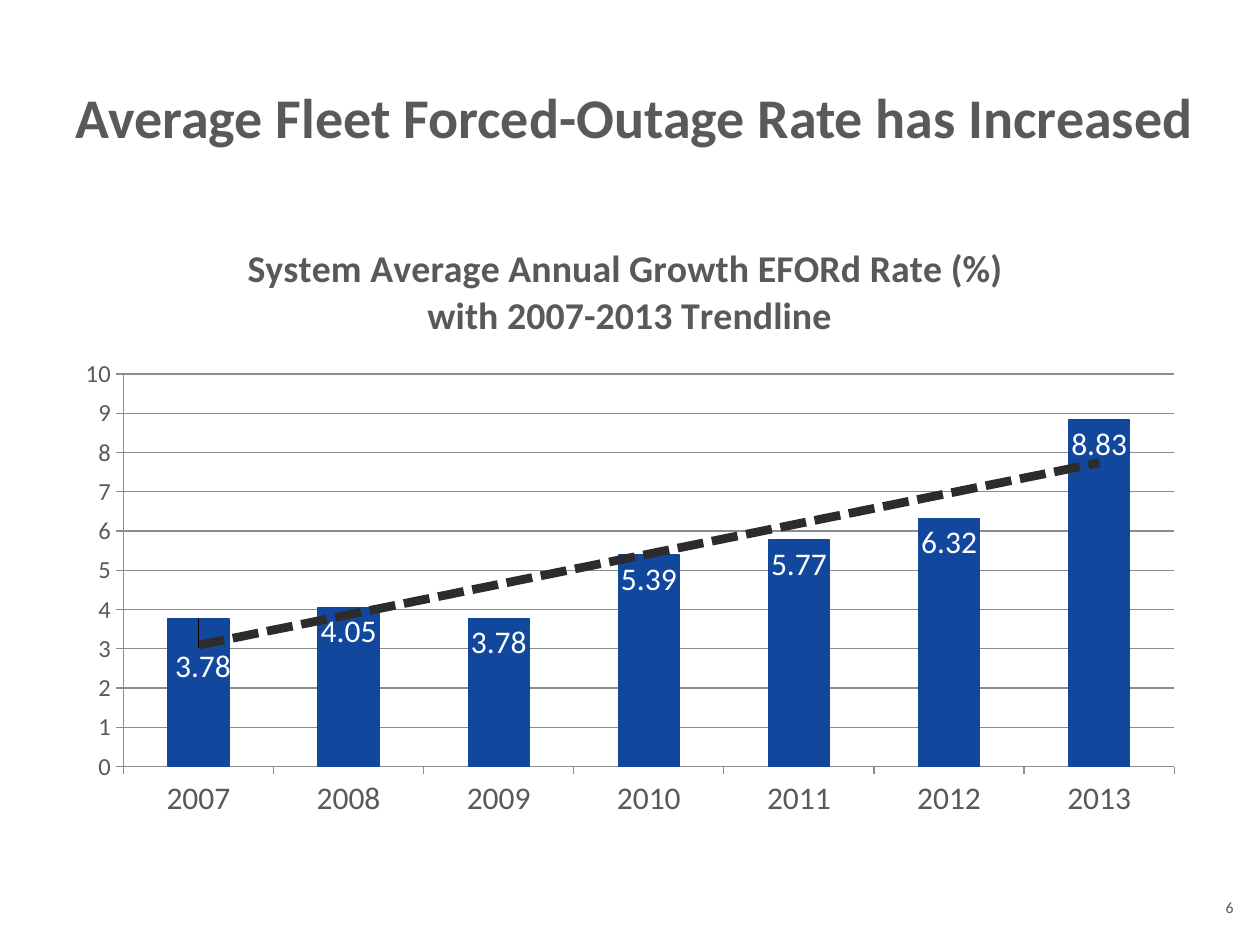
"""Build the slide on the fleet's average forced-outage rate."""
from typing import Any, NamedTuple

from lxml import etree
from pptx import Presentation
from pptx.chart.data import CategoryChartData
from pptx.dml.color import RGBColor
from pptx.enum.chart import XL_CHART_TYPE, XL_LABEL_POSITION, XL_TICK_MARK
from pptx.enum.text import MSO_ANCHOR, PP_ALIGN
from pptx.oxml import parse_xml
from pptx.oxml.ns import nsdecls
from pptx.util import Cm, Pt

COLUMN = XL_CHART_TYPE.COLUMN_CLUSTERED
TOP = XL_LABEL_POSITION.INSIDE_END
OUT = XL_TICK_MARK.OUTSIDE
MIDDLE = MSO_ANCHOR.MIDDLE
CENTER = PP_ALIGN.CENTER

GRAY = RGBColor(0x59, 0x59, 0x59)
BLUE = RGBColor(0x11, 0x47, 0x9D)
WHITE = RGBColor(0xFF, 0xFF, 0xFF)
RULE = RGBColor(0x8C, 0x8C, 0x8C)
DARK = RGBColor(0x2C, 0x2C, 0x2C)

RATES = {"2007": 3.78, "2008": 4.05, "2009": 3.78, "2010": 5.39,
         "2011": 5.77, "2012": 6.32, "2013": 8.83}
TITLE = "Average Fleet Forced-Outage Rate has Increased"
HEADING = ["System Average Annual Growth EFORd Rate (%) ",
           "with 2007-2013 Trendline"]
FRAME = {"word_wrap": True, "vertical_anchor": MIDDLE, "margin_left": 0,
         "margin_right": 0, "margin_top": 0, "margin_bottom": 0}
SCALE = {"minimum_scale": 0, "maximum_scale": 10, "major_unit": 1,
         "has_major_gridlines": True}
LABELS = {"show_value": True, "position": TOP, "number_format": "0.00",
          "number_format_is_linked": False}


class Look(NamedTuple):
    """Hold the size, colour and weight of a text."""
    size: float
    color: RGBColor = GRAY
    bold: bool = False


class Box(NamedTuple):
    """Hold a place in centimetres."""
    left: float
    top: float
    width: float
    height: float

    def sides(self) -> list[Cm]:
        """Return the four lengths."""
        return [Cm(side) for side in self]


def assign(item: Any, values: dict[str, Any]) -> None:
    """Set each named attribute."""
    for name, value in values.items():
        setattr(item, name, value)


def style(font: Any, look: Look) -> None:
    """Apply a look to a font."""
    assign(font, {"name": "Calibri", "size": Pt(look.size), "bold": look.bold})
    font.color.rgb = look.color


def write(frame: Any, lines: list[str], look: Look) -> None:
    """Write centred lines into a text frame."""
    for i, line in enumerate(lines):
        para = frame.add_paragraph() if i else frame.paragraphs[0]
        para.alignment = CENTER
        run = para.add_run()
        run.text = line
        style(run.font, look)


def stroke(line: Any, color: RGBColor) -> None:
    """Draw a thin line in one colour."""
    line.color.rgb = color
    line.width = Pt(0.75)


def trend(series: Any) -> None:
    """Add a dashed linear trend line."""
    node = parse_xml(
        f'<c:trendline {nsdecls("c", "a")}><c:spPr><a:ln w="{Pt(5)}">'
        f'<a:solidFill><a:srgbClr val="{DARK}"/></a:solidFill>'
        '<a:prstDash val="sysDash"/></a:ln></c:spPr>'
        '<c:trendlineType val="linear"/><c:dispRSqr val="0"/>'
        '<c:dispEq val="0"/></c:trendline>')
    series._element.xpath("c:cat")[0].addprevious(node)


def shift(series: Any, across: float, down: float) -> None:
    """Move the first value label off the trend line."""
    label = series.points[0].data_label
    label.position = TOP
    style(label.font, Look(18, WHITE))
    spot = series._element.xpath("c:dLbls/c:dLbl/c:idx")[0]
    layout = parse_xml(f'<c:layout {nsdecls("c")}/>')
    place = etree.SubElement(layout, layout.tag.replace("layout", "manualLayout"))
    for name, value in {"x": across, "y": down}.items():
        etree.SubElement(place, layout.tag.replace("layout", name), val=str(value))
    spot.addnext(layout)


def draw_chart(slide: Any, box: Box) -> None:
    """Draw the yearly rates as columns."""
    data = CategoryChartData()
    data.categories = list(RATES)
    data.add_series("Series 1", list(RATES.values()))
    chart = slide.shapes.add_chart(COLUMN, *box.sides(), data).chart
    chart.has_legend = False
    style(chart.font, Look(18))
    write(chart.chart_title.text_frame, HEADING, Look(21.6, bold=True))
    chart.chart_title.include_in_layout = False
    assign(chart.value_axis, SCALE)
    for axis, size in ((chart.category_axis, 18), (chart.value_axis, 14)):
        axis.major_tick_mark = OUT
        style(axis.tick_labels.font, Look(size))
        stroke(axis.format.line, RULE)
    stroke(chart.value_axis.major_gridlines.format.line, RULE)
    plot = chart.plots[0]
    assign(plot, {"gap_width": 146, "vary_by_categories": False})
    series = plot.series[0]
    series.format.fill.solid()
    series.format.fill.fore_color.rgb = BLUE
    stroke(series.format.line, BLUE)
    assign(series.data_labels, LABELS)
    style(series.data_labels.font, Look(18, WHITE))
    shift(series, 0.004, 0.04)
    trend(series)


def main() -> None:
    """Build and save the slide."""
    deck = Presentation()
    assign(deck, {"slide_width": Cm(25.4), "slide_height": Cm(19.05)})
    slide = deck.slides.add_slide(deck.slide_layouts[5])
    title = slide.shapes.title
    spot = Box(1.27, 0.76, 23.06, 3.18)
    assign(title, dict(zip(spot._fields, spot.sides())))
    page = slide.shapes.add_textbox(*Box(24.36, 17.91, 0.86, 0.74).sides())
    for shape, text, look in ((title, TITLE, Look(32, bold=True)),
                              (page, "6", Look(9))):
        assign(shape.text_frame, FRAME)
        write(shape.text_frame, [text], look)
    draw_chart(slide, Box(1.27, 4.45, 22.86, 12.27))
    deck.save("out.pptx")


if __name__ == "__main__":
    main()
